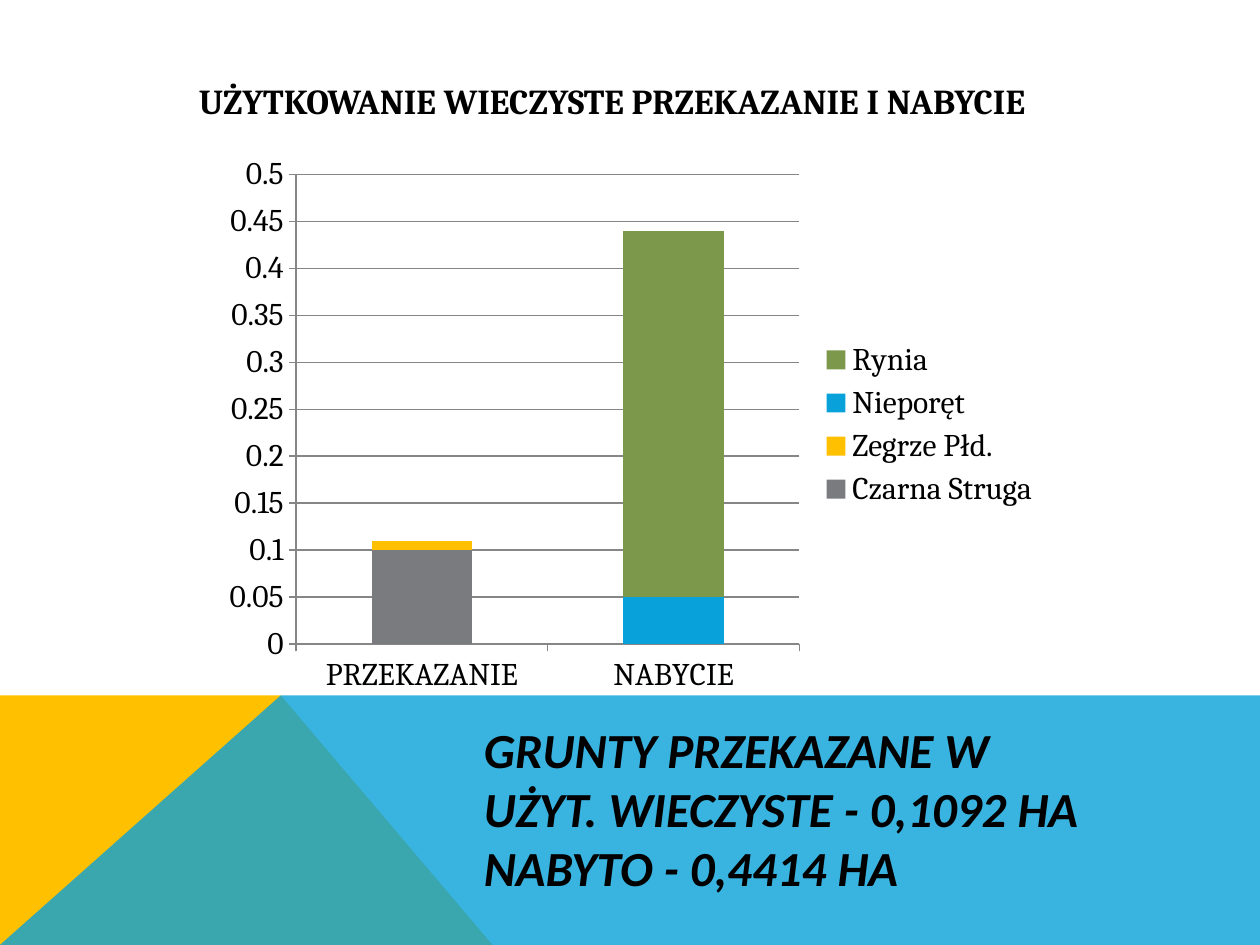
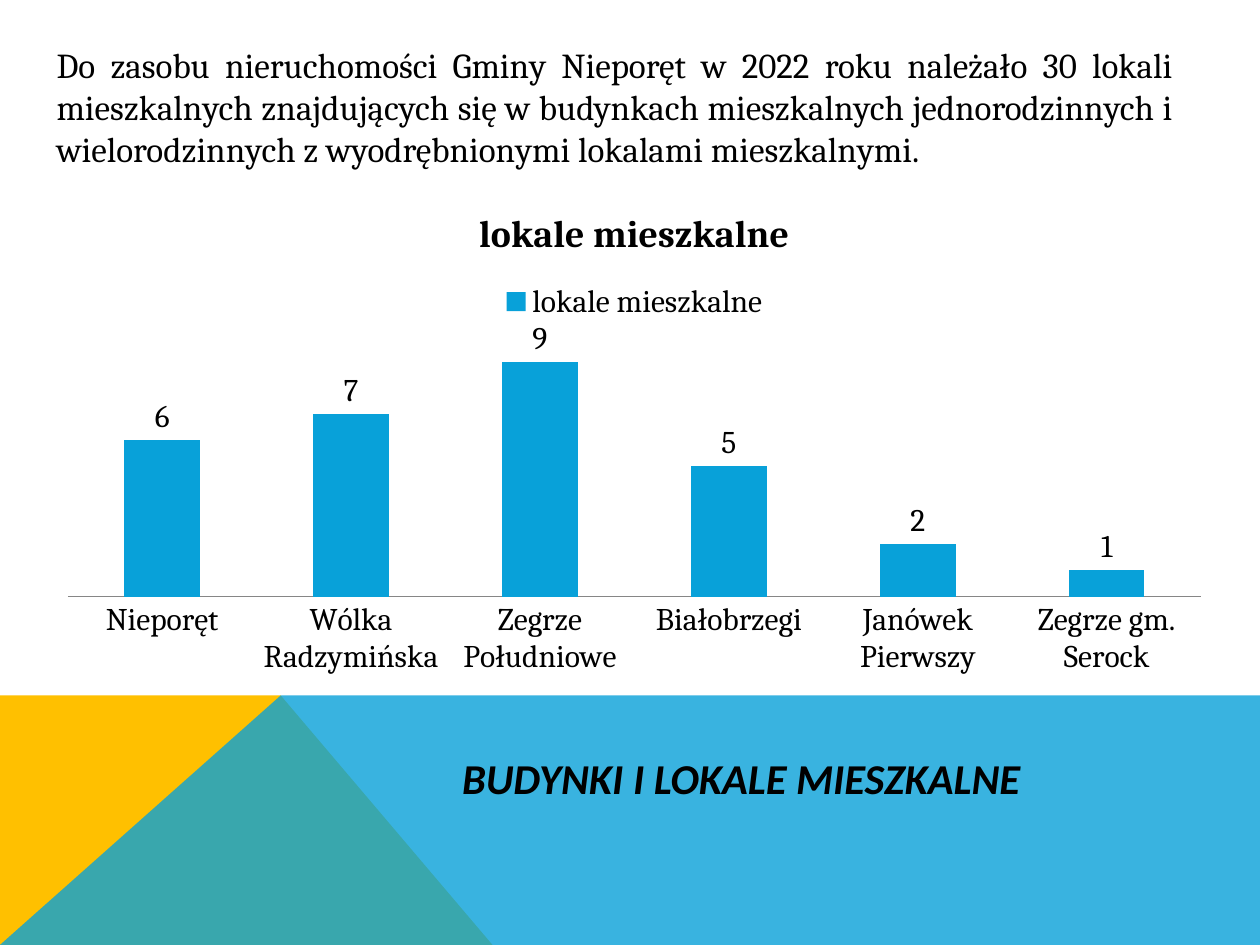
from lxml.etree import SubElement
from pptx import Presentation
from pptx.chart.data import CategoryChartData
from pptx.dml.color import RGBColor
from pptx.enum.chart import XL_CHART_TYPE, XL_LABEL_POSITION, XL_LEGEND_POSITION, XL_TICK_MARK
from pptx.enum.text import MSO_ANCHOR, MSO_AUTO_SIZE, PP_ALIGN
from pptx.oxml.ns import qn
from pptx.util import Cm, Pt

BLACK = RGBColor(0x00, 0x00, 0x00)
YELLOW = RGBColor(0xFF, 0xC0, 0x00)
BLUE = RGBColor(0x08, 0xA1, 0xD9)
GREY = RGBColor(0x79, 0x7B, 0x7E)
GREEN = RGBColor(0x7C, 0x98, 0x4A)
AXIS_GREY = RGBColor(0x86, 0x86, 0x86)

TITLE_FONT, TEXT_FONT = "Calibri", "Cambria"
WIDTH, HEIGHT = 25.4, 19.05
BAND_TOP, BAND_PEAK, BAND_FOOT = 14.02, 5.66, 9.93

# Content: lengths in centimetres, boxes as left, top, width, height
LAND = {
    "title": ["GRUNTY PRZEKAZANE W", "UŻYT. WIECZYSTE - 0,1092 HA", "NABYTO - 0,4414 HA"],
    "title_box": (9.5, 15.52, 14.2, 1.52),
    "heading": ["UŻYTKOWANIE WIECZYSTE PRZEKAZANIE I NABYCIE"],
    "heading_box": (1.9, 0.33, 20.88, 9.93),
    "categories": ["PRZEKAZANIE", "NABYCIE"],
    "series": [
        ("Czarna Struga", (0.1, None), GREY),
        ("Zegrze Płd.", (0.01, None), YELLOW),
        ("Nieporęt", (None, 0.05), BLUE),
        ("Rynia", (None, 0.39), GREEN),
    ],
    "chart_box": (4.29, 2.92, 16.94, 11.28),
}
HOUSING = {
    "title": ["BUDYNKI I LOKALE MIESZKALNE"],
    "title_box": (4.5, 14.91, 20.88, 1.52),
    "intro": ["Do zasobu nieruchomości Gminy Nieporęt w 2022 roku należało 30 lokali "
              "mieszkalnych znajdujących się w budynkach mieszkalnych jednorodzinnych i "
              "wielorodzinnych z wyodrębnionymi lokalami mieszkalnymi."],
    "intro_box": (0.89, 0.74, 23.01, 3.68),
    "categories": ["Nieporęt", "Wólka Radzymińska", "Zegrze Południowe",
                   "Białobrzegi", "Janówek Pierwszy", "Zegrze gm. Serock"],
    "series": [("lokale mieszkalne", (6, 7, 9, 5, 2, 1), BLUE)],
    "chart_box": (0.89, 3.73, 23.8, 10.08),
}


def lengths(box):
    return [Cm(value) for value in box]


def write(shape, lines, box=None, font=TEXT_FONT, size=20, bold=False, italic=False,
          align=PP_ALIGN.LEFT, anchor=MSO_ANCHOR.TOP, margin_top=0.13):
    """Fill a shape with one plain paragraph per line."""
    if box:
        shape.left, shape.top, shape.width, shape.height = lengths(box)
    frame = shape.text_frame
    frame.word_wrap = True
    frame.auto_size = MSO_AUTO_SIZE.NONE
    frame.vertical_anchor = anchor
    frame.margin_top = Cm(margin_top)
    frame.text = "\n".join(lines)
    for paragraph in frame.paragraphs:
        paragraph.alignment = align
        paragraph.space_before = Pt(0)
        properties = paragraph._p.get_or_add_pPr()
        properties.set("marL", "0")
        properties.set("indent", "0")
        SubElement(properties, qn("a:buNone"))
        for run in paragraph.runs:
            run.font.name, run.font.size = font, Pt(size)
            run.font.bold, run.font.italic = bold, italic
            run.font.color.rgb = BLACK


def write_title(slide, content, size, align):
    write(slide.shapes.title, content["title"], content["title_box"], font=TITLE_FONT,
          size=size, bold=True, italic=True, align=align, anchor=MSO_ANCHOR.MIDDLE)


def add_bands(presentation, slide):
    """Draw the bottom bands and move them to the slide master, behind everything."""
    bands = [
        ([(0, HEIGHT), (0, BAND_TOP), (BAND_PEAK, BAND_TOP), (BAND_FOOT, HEIGHT)], YELLOW, None),
        ([(0, HEIGHT), (BAND_PEAK, BAND_TOP), (WIDTH, BAND_TOP), (WIDTH, HEIGHT)], BLUE, 80),
    ]
    master_tree = presentation.slide_master.shapes.element
    for index, (corners, colour, opacity) in enumerate(bands):
        points = [lengths(corner) for corner in corners]
        builder = slide.shapes.build_freeform(*points[0])
        builder.add_line_segments(points[1:], close=True)
        band = builder.convert_to_shape()
        band.shadow.inherit = False
        band.line.fill.background()
        band.fill.solid()
        band.fill.fore_color.rgb = colour
        if opacity:
            colour_element = band.element.spPr.find(qn("a:solidFill"))[0]
            SubElement(colour_element, qn("a:alpha"), val=str(opacity * 1000))
        band.element.nvSpPr.cNvPr.id = 100 + index
        master_tree.insert(2 + index, band.element)


def add_column_chart(slide, content, chart_type, overlap, legend_position):
    data = CategoryChartData()
    data.categories = content["categories"]
    for name, values, _ in content["series"]:
        data.add_series(name, values)
    chart = slide.shapes.add_chart(chart_type, *lengths(content["chart_box"]), data).chart
    chart.font.name, chart.font.size = TEXT_FONT, Pt(18)
    chart.font.color.rgb = BLACK
    chart.has_title = False
    chart.has_legend = True
    chart.legend.position = legend_position
    chart.legend.include_in_layout = False
    plot = chart.plots[0]
    plot.vary_by_categories = False
    plot.gap_width, plot.overlap = 150, overlap
    for series, (_, _, colour) in zip(plot.series, content["series"]):
        series.format.fill.solid()
        series.format.fill.fore_color.rgb = colour
    chart.category_axis.format.line.color.rgb = AXIS_GREY
    return chart


def build_land_slide(slide):
    write_title(slide, LAND, 28, PP_ALIGN.LEFT)
    write(slide.placeholders[1], LAND["heading"], LAND["heading_box"], bold=True,
          align=PP_ALIGN.CENTER, margin_top=1.27)
    chart = add_column_chart(slide, LAND, XL_CHART_TYPE.COLUMN_STACKED, 100,
                             XL_LEGEND_POSITION.RIGHT)
    chart.category_axis.major_tick_mark = XL_TICK_MARK.OUTSIDE
    axis = chart.value_axis
    axis.major_tick_mark = XL_TICK_MARK.OUTSIDE
    axis.minimum_scale, axis.maximum_scale, axis.major_unit = 0, 0.5, 0.05
    axis.format.line.color.rgb = AXIS_GREY
    axis.major_gridlines.format.line.color.rgb = AXIS_GREY


def build_housing_slide(slide):
    write_title(slide, HOUSING, 24.3, PP_ALIGN.CENTER)
    chart = add_column_chart(slide, HOUSING, XL_CHART_TYPE.COLUMN_CLUSTERED, -25,
                             XL_LEGEND_POSITION.TOP)
    chart.has_title = True
    chart.chart_title.include_in_layout = False
    chart.chart_title.text_frame.text = HOUSING["series"][0][0]
    font = chart.chart_title.text_frame.paragraphs[0].runs[0].font
    font.name, font.size, font.bold = TEXT_FONT, Pt(21.6), True
    font.color.rgb = BLACK
    chart.category_axis.major_tick_mark = XL_TICK_MARK.NONE
    axis = chart.value_axis
    axis.has_major_gridlines = False
    axis.minimum_scale, axis.maximum_scale = 0, 10
    axis.visible = False
    labels = chart.plots[0].series[0].data_labels
    labels.show_value = True
    labels.position = XL_LABEL_POSITION.OUTSIDE_END
    # Introductory text above the chart
    intro = slide.shapes.add_textbox(*lengths(HOUSING["intro_box"]))
    write(intro, HOUSING["intro"], align=PP_ALIGN.JUSTIFY)


def main():
    presentation = Presentation()
    presentation.slide_width, presentation.slide_height = Cm(WIDTH), Cm(HEIGHT)
    title_and_content, title_only = (presentation.slide_layouts[i] for i in (1, 5))
    land_slide = presentation.slides.add_slide(title_and_content)
    add_bands(presentation, land_slide)
    build_land_slide(land_slide)
    build_housing_slide(presentation.slides.add_slide(title_only))
    presentation.save("out.pptx")


if __name__ == "__main__":
    main()
